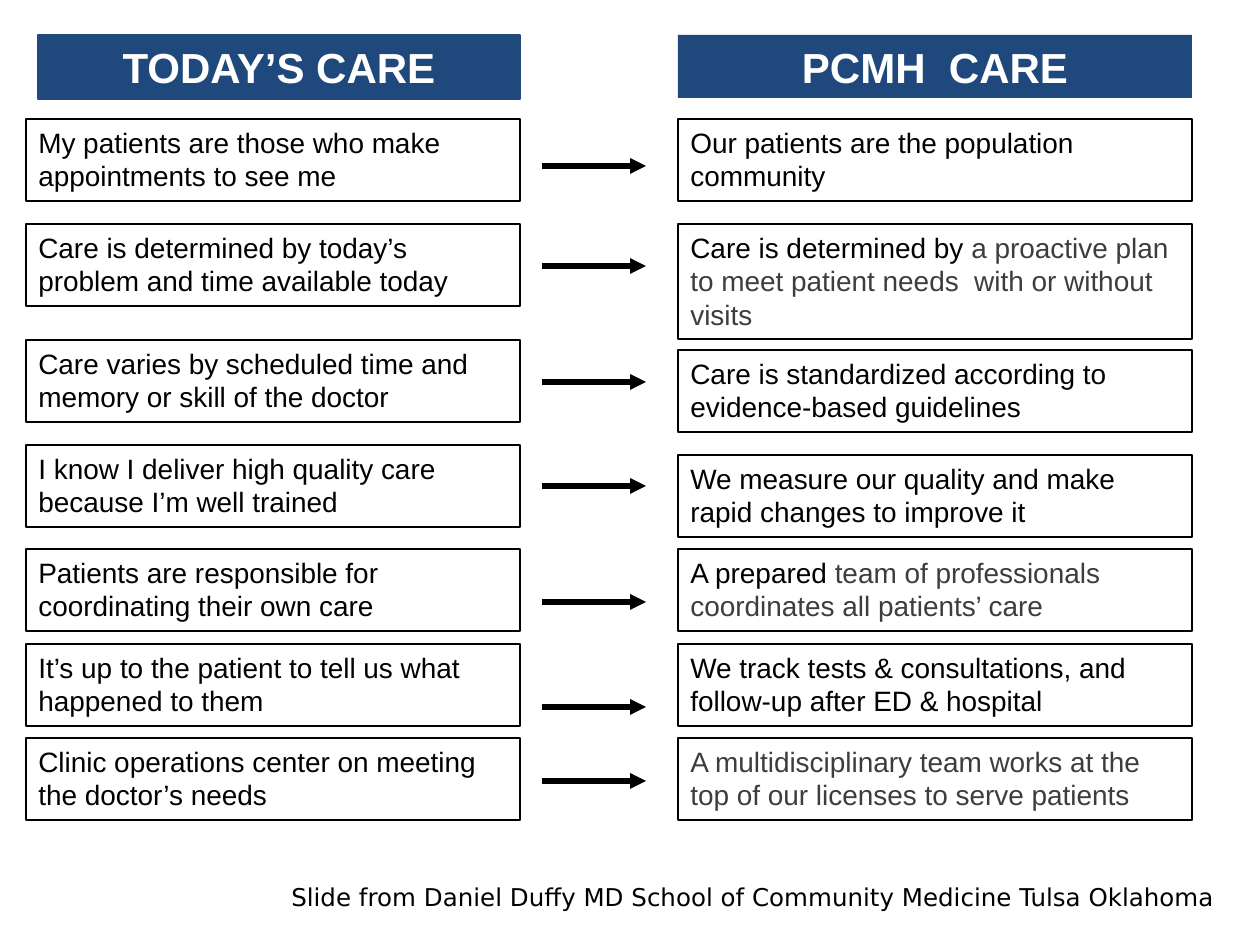
from dataclasses import dataclass

import pptx
import pptx.dml.color
import pptx.enum.shapes
import pptx.enum.text
import pptx.oxml
import pptx.oxml.ns
import pptx.util

EMU_PER_PX = 914400 // 126
COLORS = {"navy": "1F497D", "white": "FFFFFF", "black": "000000", "gray": "3D3D3D"}
LEFT_X, LEFT_WIDTH = 26, 494
RIGHT_X, RIGHT_WIDTH = 678, 514
ARROW_START, ARROW_END = 542, 646
LINE_HEIGHT, BOX_PADDING = 33, 16
ALIGN = pptx.enum.text.PP_ALIGN


@dataclass(frozen=True)
class Span:
    text: str
    color: str = "black"


@dataclass(frozen=True)
class Comparison:
    today: str
    pcmh: tuple[Span, ...]
    today_top: int
    pcmh_top: int
    arrow_y: int
    pcmh_lines: int = 2


COMPARISONS = [
    Comparison("My patients are those who make appointments to see me",
               (Span("Our patients are the population community"),), 119, 119, 166),
    Comparison("Care is determined by today’s problem and time available today",
               (Span("Care is determined by "),
                Span("a proactive plan to meet patient needs  with or without visits", "gray")),
               224, 224, 266, pcmh_lines=3),
    Comparison("Care varies by scheduled time and memory or skill of the doctor",
               (Span("Care is standardized according to evidence-based guidelines"),),
               340, 350, 382),
    Comparison("I know I deliver high quality care because I’m well trained",
               (Span("We measure our quality and make rapid changes to improve it"),),
               445, 455, 486),
    Comparison("Patients are responsible for coordinating their own care",
               (Span("A prepared "),
                Span("team of professionals coordinates all patients’ care", "gray")),
               549, 549, 602),
    Comparison("It’s up to the patient to tell us what happened to them",
               (Span("We track tests & consultations, and follow-up after ED & hospital"),),
               644, 644, 707),
    Comparison("Clinic operations center on meeting the doctor’s needs",
               (Span("A multidisciplinary team works at the top of our licenses "
                     "to serve patients", "gray"),), 738, 738, 781),
]


def px(length: int) -> pptx.util.Emu:
    return pptx.util.Emu(length * EMU_PER_PX)


def rgb(name: str) -> pptx.dml.color.RGBColor:
    return pptx.dml.color.RGBColor.from_string(COLORS[name])


def write_text(box, spans: tuple[Span, ...], *, size: int = 16, font: str = "Arial",
               bold: bool = False, align=ALIGN.LEFT) -> None:
    frame = box.text_frame
    frame.word_wrap = True
    frame.auto_size = pptx.enum.text.MSO_AUTO_SIZE.SHAPE_TO_FIT_TEXT
    frame.vertical_anchor = pptx.enum.text.MSO_ANCHOR.TOP
    para = frame.paragraphs[0]
    para.alignment = align
    for span in spans:
        run = para.add_run()
        run.text = span.text
        run.font.size = pptx.util.Pt(size)
        run.font.name = font
        run.font.bold = bold
        run.font.color.rgb = rgb(span.color)


def add_box(page, left: int, top: int, width: int, height: int, *,
            fill: str | None = None, line: str | None = "black"):
    box = page.shapes.add_shape(pptx.enum.shapes.MSO_SHAPE.RECTANGLE,
                                px(left), px(top), px(width), px(height))
    box.shadow.inherit = False
    if fill:
        box.fill.solid()
        box.fill.fore_color.rgb = rgb(fill)
    else:
        box.fill.background()
    if line:
        box.line.color.rgb = rgb(line)
        box.line.width = pptx.util.Pt(0.75)
    else:
        box.line.fill.background()
    return box


def add_header(page, text: str, left: int, width: int, height: int,
               line: str | None) -> None:
    box = add_box(page, left, 35, width, height, fill="navy", line=line)
    write_text(box, (Span(text, "white"),), size=24, bold=True, align=ALIGN.CENTER)


def add_arrow(page, y: int) -> None:
    arrow = page.shapes.add_connector(pptx.enum.shapes.MSO_CONNECTOR.STRAIGHT,
                                      px(ARROW_START), px(y), px(ARROW_END), px(y))
    arrow.line.color.rgb = rgb("black")
    arrow.line.width = pptx.util.Pt(3)
    tail = pptx.oxml.parse_xml(
        f'<a:tailEnd {pptx.oxml.ns.nsdecls("a")} type="triangle"/>')
    arrow.line._get_or_add_ln().append(tail)
    effects = pptx.oxml.parse_xml(f'<a:effectLst {pptx.oxml.ns.nsdecls("a")}/>')
    arrow._element.spPr.append(effects)


def add_comparison(page, row: Comparison) -> None:
    today = add_box(page, LEFT_X, row.today_top, LEFT_WIDTH,
                    2 * LINE_HEIGHT + BOX_PADDING)
    write_text(today, (Span(row.today),))
    pcmh = add_box(page, RIGHT_X, row.pcmh_top, RIGHT_WIDTH,
                   row.pcmh_lines * LINE_HEIGHT + BOX_PADDING)
    write_text(pcmh, row.pcmh)
    add_arrow(page, row.arrow_y)


def main() -> None:
    deck = pptx.Presentation()
    deck.slide_width = pptx.util.Inches(10)
    deck.slide_height = pptx.util.Inches(7.5)
    page = deck.slides.add_slide(deck.slide_layouts[6])

    add_header(page, "TODAY’S CARE", 38, 482, 64, "navy")
    add_header(page, "PCMH  CARE", RIGHT_X, RIGHT_WIDTH, 63, None)
    for row in COMPARISONS:
        add_comparison(page, row)

    credit = page.shapes.add_textbox(px(-15), px(876), px(1250), px(42))
    write_text(credit, (Span("Slide from Daniel Duffy MD School of Community "
                             "Medicine Tulsa Oklahoma "),),
               size=14, font="DejaVu Sans", align=ALIGN.RIGHT)
    deck.save("out.pptx")


if __name__ == "__main__":
    main()
